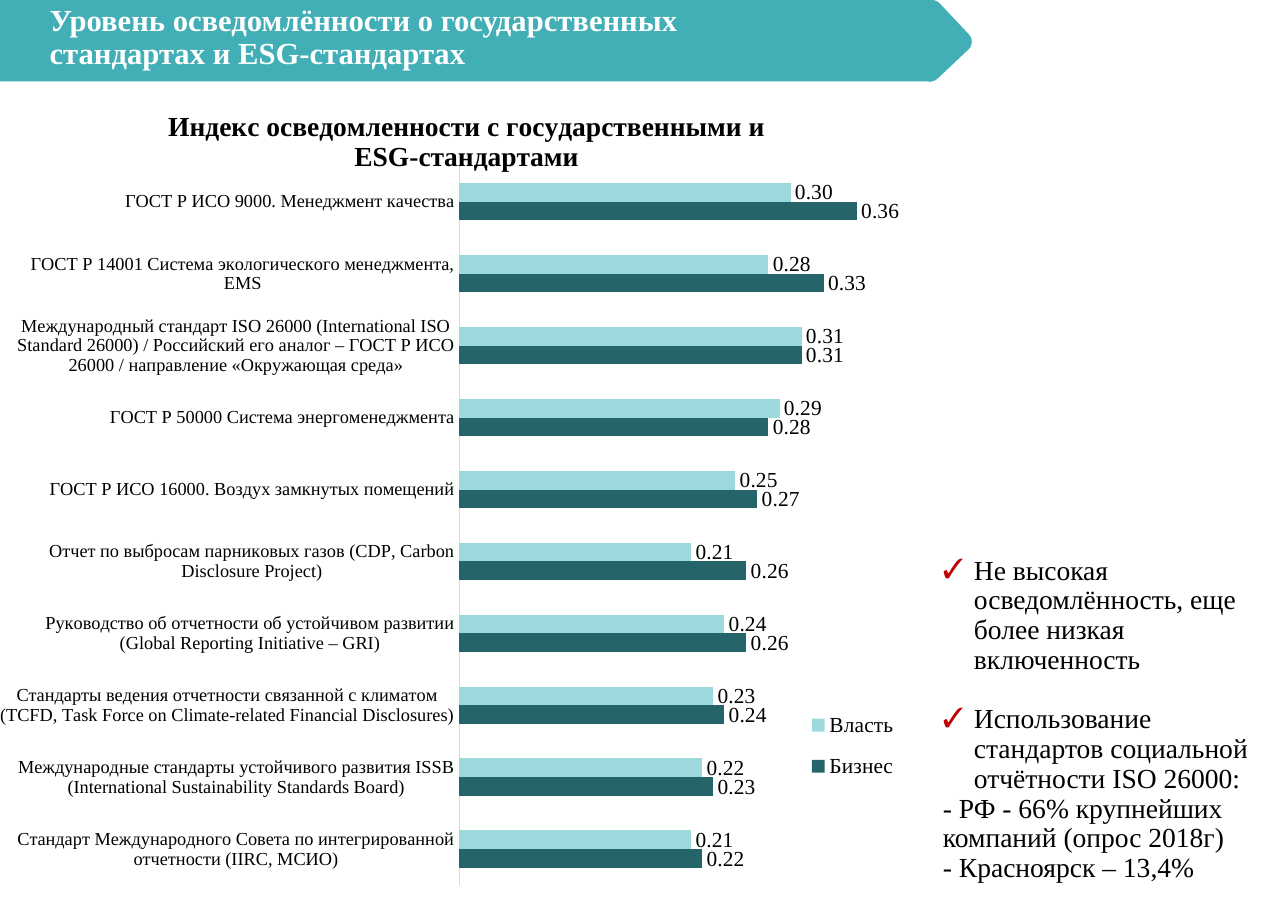
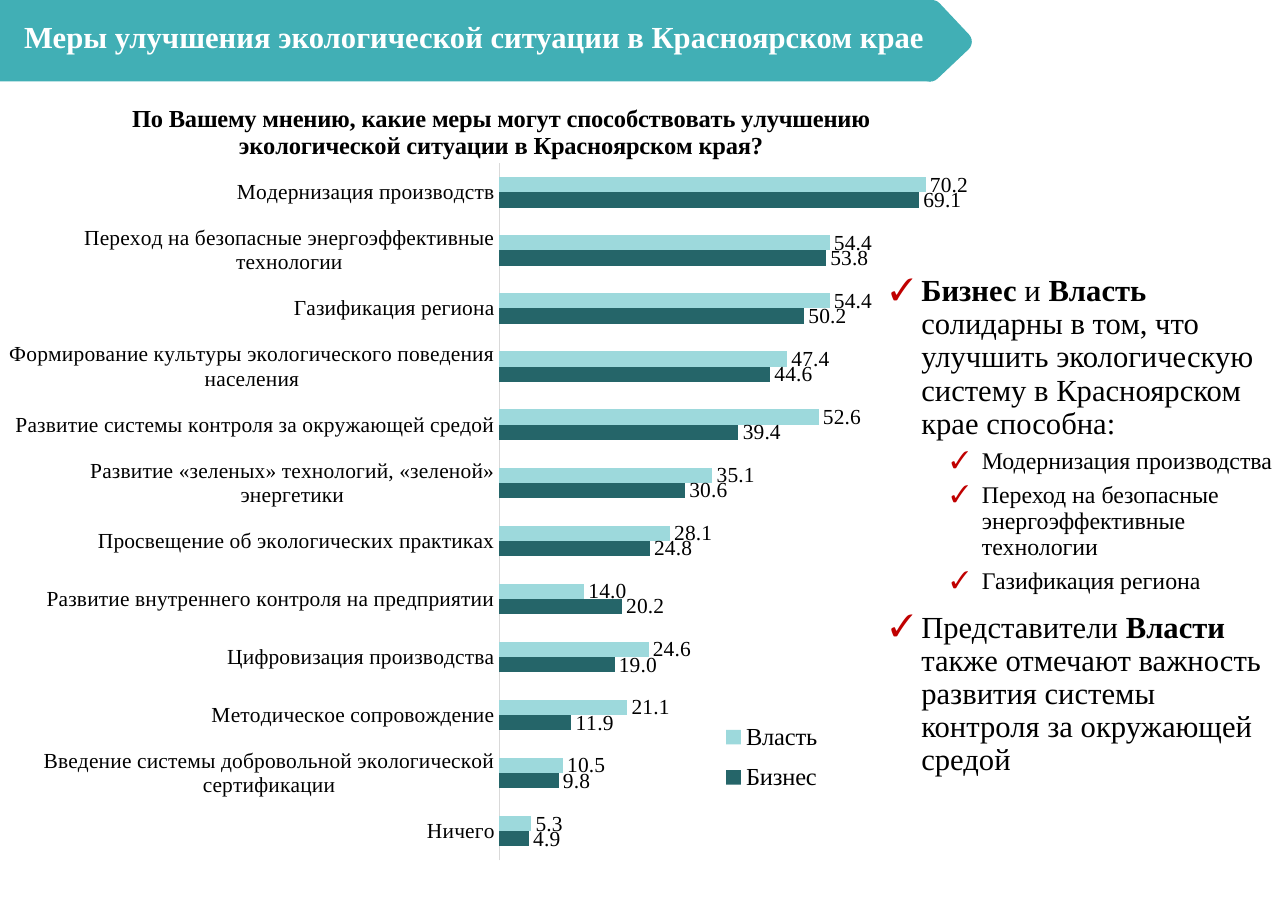
"""Build two survey slides about ESG standards and environmental measures."""
import pptx
import pptx.chart.data
import pptx.dml.color
import pptx.enum.chart
import pptx.enum.shapes
import pptx.enum.text
import pptx.oxml
import pptx.oxml.ns
import pptx.util

Pt = pptx.util.Pt
qn = pptx.oxml.ns.qn

FONT = "Times New Roman"
TEAL, DARK, LIGHT = "41AFB5", "256569", "9DD9DC"
BLACK, WHITE, RED, GREY = "000000", "FFFFFF", "C00000", "D9D9D9"
LINE = 0.9
INDENT = 20.25

STANDARDS = [
    ("Стандарт Международного Совета по интегрированной отчетности (IIRC, МСИО)", 0.22, 0.21),
    ("Международные стандарты устойчивого развития ISSB "
     "(International Sustainability Standards Board)", 0.23, 0.22),
    ("Стандарты ведения отчетности связанной с климатом "
     "(TCFD, Task Force on Climate-related Financial Disclosures)", 0.24, 0.23),
    ("Руководство об отчетности об устойчивом развитии "
     "(Global Reporting Initiative – GRI)", 0.26, 0.24),
    ("Отчет по выбросам парниковых газов (CDP, Carbon Disclosure Project)", 0.26, 0.21),
    ("ГОСТ Р ИСО 16000. Воздух замкнутых помещений", 0.27, 0.25),
    ("ГОСТ Р 50000 Система энергоменеджмента", 0.28, 0.29),
    ("Международный стандарт ISO 26000 (International ISO Standard 26000) / "
     "Российский его аналог – ГОСТ Р ИСО 26000 / направление «Окружающая среда»", 0.31, 0.31),
    ("ГОСТ Р 14001 Система экологического менеджмента, EMS", 0.33, 0.28),
    ("ГОСТ Р ИСО 9000. Менеджмент качества", 0.36, 0.30),
]
MEASURES = [
    ("Ничего", 4.9, 5.3),
    ("Введение системы добровольной экологической сертификации", 9.8, 10.5),
    ("Методическое сопровождение", 11.9, 21.1),
    ("Цифровизация производства", 19.0, 24.6),
    ("Развитие внутреннего контроля на предприятии", 20.2, 14.0),
    ("Просвещение об экологических практиках", 24.8, 28.1),
    ("Развитие «зеленых» технологий, «зеленой» энергетики", 30.6, 35.1),
    ("Развитие системы контроля за окружающей средой", 39.4, 52.6),
    ("Формирование культуры экологического поведения населения", 44.6, 47.4),
    ("Газификация региона", 50.2, 54.4),
    ("Переход на безопасные энергоэффективные технологии", 53.8, 54.4),
    ("Модернизация производств", 69.1, 70.2),
]


def rgb(color):
    """Turn a hex string into a colour."""
    return pptx.dml.color.RGBColor.from_string(color)


def style(font, size, color=BLACK, bold=False):
    """Format a font."""
    font.name, font.size, font.bold = FONT, Pt(size), bold
    font.color.rgb = rgb(color)


def place(sp, box):
    """Move a shape to a box given in points."""
    sp.left, sp.top, sp.width, sp.height = map(Pt, box)


def add_band(s, master, box):
    """Draw the title band with its arrow tip and hand it to the master."""
    x, y, w, h = box
    side = 41.8
    tip = (x + w - side / 2, y + h / 2 - side / 2, side, side)
    shapes = pptx.enum.shapes.MSO_SHAPE
    parts = [(shapes.RECTANGLE, box, 0), (shapes.ROUNDED_RECTANGLE, tip, 46.7)]
    for i, (kind, part, angle) in enumerate(parts):
        sp = s.shapes.add_shape(kind, *map(Pt, part))
        sp.rotation = angle
        sp.shadow.inherit = False
        sp.fill.solid()
        sp.fill.fore_color.rgb = rgb(TEAL)
        sp.line.fill.background()
        master.shapes.element.insert(2 + i, sp.element)


def add_title(s, text, box):
    """Fill the title placeholder."""
    sp = s.shapes.title
    place(sp, box)
    tf = sp.text_frame
    tf.word_wrap = True
    tf.auto_size = pptx.enum.text.MSO_AUTO_SIZE.NONE
    tf.vertical_anchor = pptx.enum.text.MSO_ANCHOR.MIDDLE
    p = tf.paragraphs[0]
    p.alignment = pptx.enum.text.PP_ALIGN.LEFT
    p.line_spacing = LINE
    r = p.add_run()
    r.text = text
    style(r.font, 20, WHITE, True)


def set_bullet(p, left, checked):
    """Give a paragraph a red check mark, or no bullet at all."""
    ppr = p._p.get_or_add_pPr()
    ppr.set("marL", str(Pt(left)))
    ppr.set("indent", str(-Pt(INDENT) if checked else 0))
    if not checked:
        ppr.append(pptx.oxml.parse_xml(f'<a:buNone {pptx.oxml.ns.nsdecls("a")}/>'))
        return
    ns = pptx.oxml.ns.nsdecls("a")
    for xml in (f'<a:buClr {ns}><a:srgbClr val="{RED}"/></a:buClr>',
                f'<a:buFont {ns} typeface="{FONT}"/>',
                f'<a:buChar {ns} char="✓"/>'):
        ppr.append(pptx.oxml.parse_xml(xml))


def add_body(s, items, box):
    """Fill the body placeholder; items hold level, check, size, space, runs."""
    sp = s.placeholders[1]
    place(sp, box)
    tf = sp.text_frame
    tf.word_wrap = True
    tf.auto_size = pptx.enum.text.MSO_AUTO_SIZE.NONE
    tf.vertical_anchor = pptx.enum.text.MSO_ANCHOR.TOP
    for i, (level, checked, size, space, runs) in enumerate(items):
        p = tf.add_paragraph() if i else tf.paragraphs[0]
        p.level = level
        set_bullet(p, (INDENT if checked else 0) + level * 39.6, checked)
        p.line_spacing = LINE
        p.space_before, p.space_after = Pt(space), Pt(0)
        for text, bold in runs:
            r = p.add_run()
            r.text = text
            style(r.font, size, bold=bold)


def set_layout(parent, index, box, inner=False):
    """Fix the place of a chart part as fractions of the chart."""
    for old in parent.findall(qn("c:layout")):
        parent.remove(old)
    target = '<c:layoutTarget val="inner"/>' if inner else ""
    modes = "".join(f'<c:{k}Mode val="edge"/>' for k in "xy")
    sizes = "".join(f'<c:{k} val="{v}"/>' for k, v in zip("xywh", box))
    parent.insert(index, pptx.oxml.parse_xml(
        f'<c:layout {pptx.oxml.ns.nsdecls("c")}><c:manualLayout>'
        f'{target}{modes}{sizes}</c:manualLayout></c:layout>'))


def add_bars(s, rows, box, title, title_size, fmt, top, cat_size, legend_size, plot_box, legend_box):
    """Draw a clustered bar chart comparing business and government."""
    names, business, government = zip(*rows)
    data = pptx.chart.data.CategoryChartData(number_format=fmt)
    data.categories = names
    data.add_series("Бизнес", business)
    data.add_series("Власть", government)
    enum = pptx.enum.chart
    chart = s.shapes.add_chart(enum.XL_CHART_TYPE.BAR_CLUSTERED, *map(Pt, box), data).chart
    style(chart.font, 14)

    chart.has_title = True
    tf = chart.chart_title.text_frame
    for i, line in enumerate(title):
        p = tf.add_paragraph() if i else tf.paragraphs[0]
        r = p.add_run()
        r.text = line
        style(r.font, title_size, bold=True)
    chart.chart_title.include_in_layout = False

    axis = chart.category_axis
    axis.major_tick_mark = axis.minor_tick_mark = enum.XL_TICK_MARK.NONE
    axis.format.line.color.rgb = rgb(GREY)
    axis.format.line.width = Pt(0.75)
    style(axis.tick_labels.font, cat_size)
    values = chart.value_axis
    values.minimum_scale, values.maximum_scale = 0, top
    values.has_major_gridlines = False
    values.visible = False

    plot = chart.plots[0]
    plot.gap_width = 182
    plot.vary_by_categories = False
    for series, color in zip(plot.series, (DARK, LIGHT)):
        series.format.fill.solid()
        series.format.fill.fore_color.rgb = rgb(color)
        labels = series.data_labels
        labels.show_value = True
        labels.position = enum.XL_LABEL_POSITION.OUTSIDE_END
        labels.number_format, labels.number_format_is_linked = fmt, False
        style(labels.font, 14)

    chart.has_legend = True
    legend = chart.legend
    legend.position = enum.XL_LEGEND_POSITION.BOTTOM
    legend.include_in_layout = False
    style(legend.font, legend_size)
    set_layout(chart.element.find(".//" + qn("c:plotArea")), 0, plot_box, True)
    set_layout(chart.element.find(".//" + qn("c:legend")), 1, legend_box)


def awareness_slide(s):
    """Show how well the standards are known."""
    add_bars(s, STANDARDS, (0, 55.4, 609, 540),
             ["Индекс осведомленности с государственными и", "ESG-стандартами"], 18,
             "0.00", 0.4, 12, 14, (0.492, 0.098, 0.475, 0.871), (0.86, 0.74, 0.11, 0.12))
    add_body(s, [
        (0, True, 18, 0, [("Не высокая осведомлённость, еще более низкая включенность", False)]),
        (0, True, 18, 19.4, [("Использование стандартов социальной отчётности ISO 26000:", False)]),
        (0, False, 18, 0, [("- РФ - 66% крупнейших компаний (опрос 2018г)", False)]),
        (0, False, 18, 0, [("- Красноярск – 13,4%", False)]),
    ], (609, 360, 217.5, 227.5))
    add_title(s, "Уровень осведомлённости о государственных стандартах и ESG-стандартах",
              (25.2, 1.4, 455, 47.5))


def measures_slide(s):
    """Show which measures would improve the environment."""
    add_bars(s, MEASURES, (0, 49.7, 655, 528.5),
             ["По Вашему мнению, какие меры могут способствовать улучшению "
              "экологической ситуации в Красноярском края?"], 16,
             "0.0", 80, 14, 16, (0.498, 0.108, 0.485, 0.862), (0.715, 0.785, 0.11, 0.115))
    shared = ["Модернизация производства",
              "Переход на безопасные энергоэффективные технологии",
              "Газификация региона"]
    add_body(s, [
        (0, True, 20, 0, [
            ("Бизнес", True), (" и ", False), ("Власть", True),
            (" солидарны в том, что улучшить экологическую систему "
             "в Красноярском крае способна:", False)]),
        *[(1, True, 15.6, 5.5, [(text, False)]) for text in shared],
        (0, True, 20, 11, [
            ("Представители ", False), ("Власти", True),
            (" также отмечают важность развития системы контроля "
             "за окружающей средой", False)]),
    ], (574.6, 176.4, 267, 336))
    add_title(s, "Меры улучшения экологической ситуации в Красноярском крае",
              (8.6, 1.4, 609, 47.5))


def main():
    """Build and save the presentation."""
    prs = pptx.Presentation()
    prs.slide_width, prs.slide_height = Pt(841.7), Pt(595.4)
    slides = [prs.slides.add_slide(prs.slide_layouts[1]) for _ in range(2)]
    add_band(slides[0], prs.slide_master, (0, 0, 608.4, 53.3))
    awareness_slide(slides[0])
    measures_slide(slides[1])
    prs.save("out.pptx")


if __name__ == "__main__":
    main()
